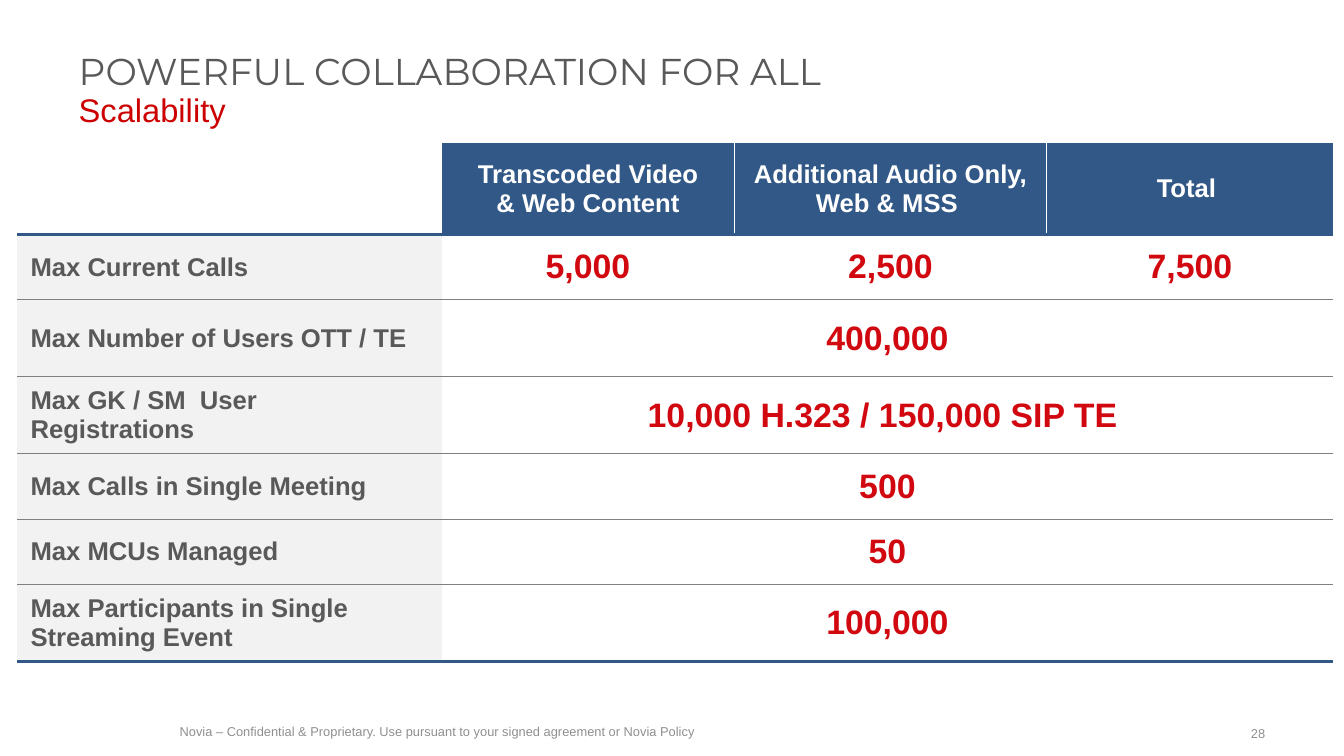
from lxml.etree import SubElement
from pptx import Presentation
from pptx.dml.color import RGBColor
from pptx.enum.text import MSO_ANCHOR, PP_ALIGN
from pptx.oxml.ns import qn
from pptx.util import Pt

WHITE = RGBColor(0xFF, 0xFF, 0xFF)
NAVY = RGBColor(0x32, 0x58, 0x87)
RED = RGBColor(0xD1, 0x08, 0x0F)
SUBTITLE_RED = RGBColor(0xCC, 0x00, 0x00)
TEXT_GRAY = RGBColor(0x59, 0x59, 0x59)
LINE_GRAY = RGBColor(0x80, 0x80, 0x80)
FOOTER_GRAY = RGBColor(0x8F, 0x8F, 0x8F)
PALE_GRAY = RGBColor(0xF2, 0xF2, 0xF2)
NO_STYLE = "{2D5ABB26-0587-4C30-8999-92F81FD0307C}"


def add_text(left, top, width, height, anchor, align, runs):
    frame = slide.shapes.add_textbox(Pt(left), Pt(top), Pt(width), Pt(height)).text_frame
    settings = {"word_wrap": True, "vertical_anchor": anchor, "margin_left": Pt(10),
                "margin_right": Pt(10), "margin_top": Pt(5), "margin_bottom": Pt(5)}
    for name, value in settings.items():
        setattr(frame, name, value)
    paragraph = frame.paragraphs[0]
    paragraph.alignment = align
    paragraph.line_spacing = 0.9
    for index, (text, size, font_name, color) in enumerate(runs):
        if index:
            paragraph.add_line_break()
        run = paragraph.add_run()
        run.text = text
        run.font.size = Pt(size)
        run.font.name = font_name
        run.font.color.rgb = color


def add_border(cell, side, color, width):
    line = SubElement(cell._tc.get_or_add_tcPr(), qn(f"a:ln{side}"), w=str(Pt(width)))
    fill = SubElement(line, qn("a:solidFill"))
    SubElement(fill, qn("a:srgbClr"), val=str(color))


deck = Presentation()
deck.slide_width = Pt(1152)
deck.slide_height = Pt(648)
slide = deck.slides.add_slide(deck.slide_layouts[6])

add_text(144, 616.5, 471, 22, MSO_ANCHOR.MIDDLE, PP_ALIGN.LEFT, [
    ("Novia – Confidential & Proprietary. Use pursuant to your signed agreement or Novia Policy",
     11, "Arial", FOOTER_GRAY)])
add_text(1060, 618.5, 34.5, 22, MSO_ANCHOR.MIDDLE, PP_ALIGN.RIGHT,
         [("28", 11, "Arial", FOOTER_GRAY)])

limits = [
    ["", "Transcoded Video\v& Web Content", "Additional Audio Only, Web & MSS ", "Total "],
    ["Max Current Calls", "5,000", "2,500", "7,500"],
    ["Max Number of Users OTT / TE", "400,000"],
    ["Max GK / SM  User\nRegistrations", "10,000 H.323 / 150,000 SIP TE "],
    ["Max Calls in Single Meeting", "500"],
    ["Max MCUs Managed", "50"],
    ["Max Participants in Single Streaming Event", "100,000"],
]
column_widths = [364, 250.5, 268, 245.5]
row_heights = [78, 56, 66, 66, 56, 56, 66]
table = slide.shapes.add_table(len(row_heights), len(column_widths), Pt(14.75), Pt(123),
                               Pt(sum(column_widths)), Pt(sum(row_heights))).table
table.first_row = False
table.horz_banding = False
table._tbl.tblPr.find(qn("a:tableStyleId")).text = NO_STYLE
for column, width in zip(table.columns, column_widths):
    column.width = Pt(width)
for row, height in zip(table.rows, row_heights):
    row.height = Pt(height)

cell_layout = {"margin_left": Pt(11.5), "margin_right": Pt(11.5), "margin_top": Pt(4.5),
               "margin_bottom": Pt(4.5), "vertical_anchor": MSO_ANCHOR.MIDDLE}
last_row = len(limits) - 1
for r, texts in enumerate(limits):
    for c in range(len(column_widths)):
        cell = table.cell(r, c)
        for name, value in cell_layout.items():
            setattr(cell, name, value)
        if r == 0 and c > 1:
            add_border(cell, "L", WHITE, 1)
        if r == 0 and c in (1, 2):
            add_border(cell, "R", WHITE, 1)
        if r > 0:
            add_border(cell, "T", *((NAVY, 3) if r == 1 else (LINE_GRAY, 1)))
        add_border(cell, "B", *((NAVY, 3) if r in (0, last_row) else (LINE_GRAY, 1)))

        if r == 0:
            background, size, color = NAVY, 22, WHITE
        elif c == 0:
            background, size, color = PALE_GRAY, 22, TEXT_GRAY
        else:
            background, size, color = None, 29, RED
        if background is None or r == c == 0:
            cell.fill.background()
        else:
            cell.fill.solid()
            cell.fill.fore_color.rgb = background

        if c < len(texts) and texts[c]:
            cell.text_frame.text = texts[c]
            for paragraph in cell.text_frame.paragraphs:
                paragraph.alignment = PP_ALIGN.CENTER if c else PP_ALIGN.LEFT
                for run in paragraph.runs:
                    font = {"size": Pt(size), "name": "Arial", "bold": True}
                    for name, value in font.items():
                        setattr(run.font, name, value)
                    run.font.color.rgb = color
    if len(texts) == 2:
        table.cell(r, 1).merge(table.cell(r, 3))

add_text(57.5, 41, 1037, 79, MSO_ANCHOR.TOP, PP_ALIGN.LEFT, [
    ("POWERFUL COLLABORATION FOR ALL", 32, "Montserrat", TEXT_GRAY),
    ("Scalability", 28, "Arial", SUBTITLE_RED)])

deck.save("out.pptx")
